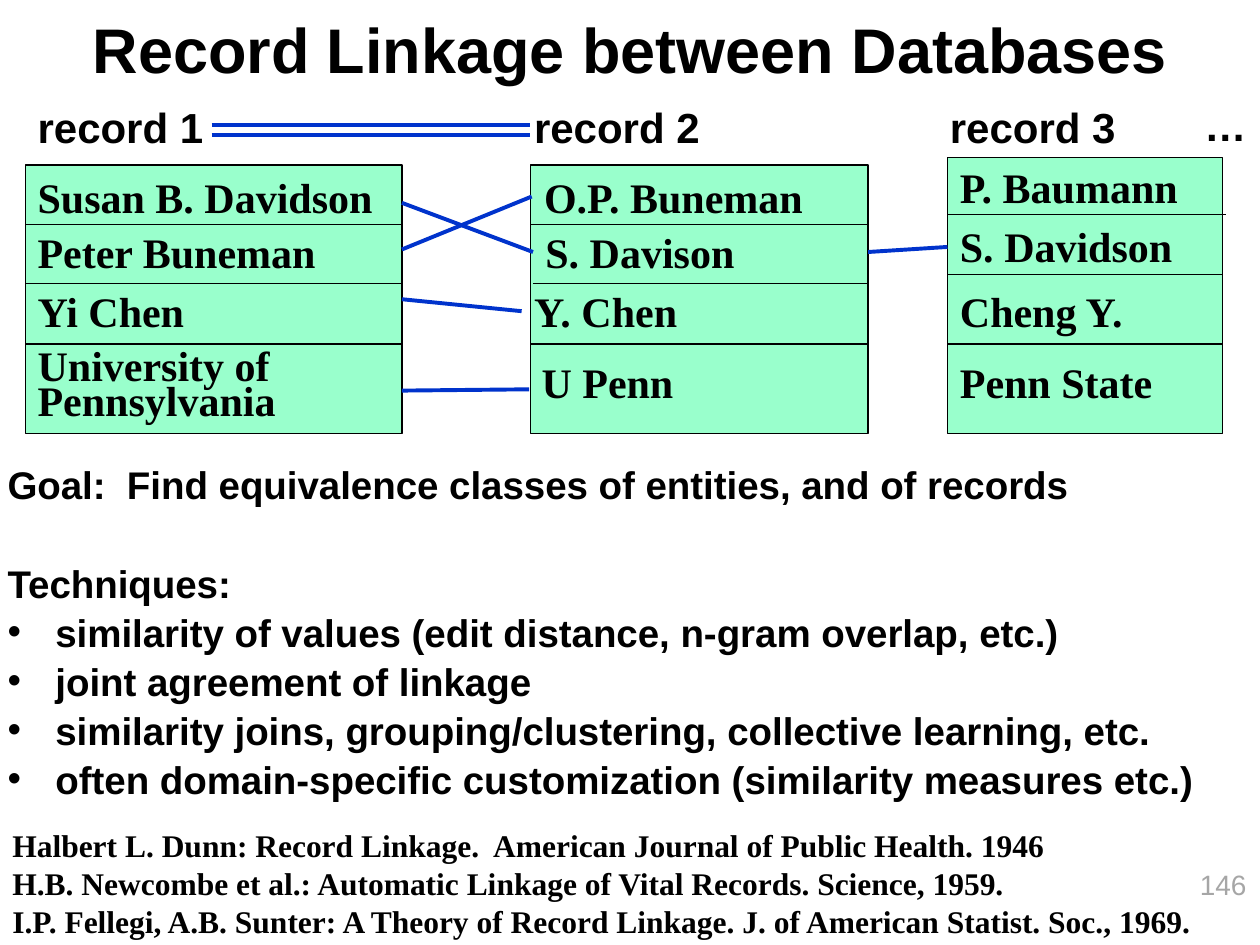
import pptx
import pptx.util
import pptx.dml.color
import pptx.enum.shapes
import pptx.enum.text
import pptx.oxml.ns
from lxml import etree

Inches, Pt = pptx.util.Inches, pptx.util.Pt
PP_ALIGN = pptx.enum.text.PP_ALIGN
ANCHOR = pptx.enum.text.MSO_ANCHOR
qn = pptx.oxml.ns.qn

COLORS = {"ink": "000000", "record": "99FFCC", "link": "0033CC",
          "paper": "FFFFFF", "number": "A6A6A6"}
SANS, SERIF = "Arial", "Times New Roman"


def rgb(name):
    return pptx.dml.color.RGBColor.from_string(COLORS[name])


class LinkageSlide:
    def __init__(self, presentation):
        self.slide = presentation.slides.add_slide(presentation.slide_layouts[1])
        self.shapes = self.slide.shapes

    def place(self, shape, left, top, width, height):
        shape.left, shape.top = Inches(left), Inches(top)
        shape.width, shape.height = Inches(width), Inches(height)

    def set_text(self, frame, lines, size, font, color="ink", bold=True,
                 align=PP_ALIGN.LEFT, spacing=None, wrap=False,
                 anchor=ANCHOR.TOP, bullets=None):
        """Fill a frame; bullets, if given, are the lines that carry one."""
        frame.word_wrap = wrap
        frame.vertical_anchor = anchor
        frame.auto_size = pptx.enum.text.MSO_AUTO_SIZE.NONE
        frame.text = "\n".join(lines)
        for paragraph, line in zip(frame.paragraphs, lines):
            paragraph.alignment = align
            paragraph.space_before = Pt(0)
            if spacing:
                paragraph.line_spacing = Pt(spacing)
            if bullets is not None:
                self.set_bullet(paragraph, line in bullets)
            paragraph.font.size = Pt(size)
            paragraph.font.name = font
            paragraph.font.bold = bold
            paragraph.font.color.rgb = rgb(color)

    def set_bullet(self, paragraph, bulleted):
        properties = paragraph._p.get_or_add_pPr()
        indent = Inches(0.38) if bulleted else 0
        properties.set("marL", str(indent))
        properties.set("indent", str(-indent))
        if bulleted:
            etree.SubElement(properties, qn("a:buFont")).set("typeface", SANS)
            etree.SubElement(properties, qn("a:buChar")).set("char", "•")
        else:
            etree.SubElement(properties, qn("a:buNone"))

    def title(self, text):
        title = self.shapes.title
        self.place(title, 0, 0, 10, 0.76)
        self.set_text(title.text_frame, [text], 36, SANS, align=PP_ALIGN.CENTER,
                      wrap=True, anchor=ANCHOR.MIDDLE)

    def body(self, goal, heading, techniques):
        body = self.slide.placeholders[1]
        self.place(body, -0.04, 3.59, 9.74, 2.85)
        self.set_text(body.text_frame, [goal, heading, *techniques], 22, SANS,
                      spacing=28, bullets=techniques)
        body.text_frame.paragraphs[1].space_before = Pt(28)

    def label(self, lines, left, top, width, height=0.5, size=24, font=SERIF, **style):
        box = self.shapes.add_textbox(Inches(left), Inches(top),
                                      Inches(width), Inches(height))
        self.set_text(box.text_frame, lines, size, font, **style)

    def rectangle(self, left, top, width, height, fill, outlined=True):
        shape = self.shapes.add_shape(
            pptx.enum.shapes.MSO_SHAPE.RECTANGLE,
            Inches(left), Inches(top), Inches(width), Inches(height))
        shape.shadow.inherit = False
        shape.fill.solid()
        shape.fill.fore_color.rgb = rgb(fill)
        if outlined:
            shape.line.color.rgb = rgb("ink")
            shape.line.width = Pt(0.75)
        else:
            shape.line.fill.background()
        return shape

    def line(self, x1, y1, x2, y2, color="ink", weight=0.75):
        connector = self.shapes.add_connector(
            pptx.enum.shapes.MSO_CONNECTOR.STRAIGHT,
            Inches(x1), Inches(y1), Inches(x2), Inches(y2))
        connector.line.color.rgb = rgb(color)
        connector.line.width = Pt(weight)
        etree.SubElement(connector._element.spPr, qn("a:effectLst"))
        return connector

    def link(self, *ends):
        return self.line(*ends, color="link", weight=2.25)

    def record(self, heading, heading_left, box, dividers, fields):
        """Draw a headed box; dividers are (x1, y, x2), fields are label arguments."""
        shape = self.rectangle(*box, "record")
        for x1, y, x2 in dividers:
            self.line(x1, y, x2, y)
        for lines, left, top, width, *height in fields:
            self.label(lines, left, top, width, *height,
                       spacing=20 if height else None)
        self.label([heading], heading_left, 0.76, 1.53, font=SANS)
        return shape


def main():
    presentation = pptx.Presentation()
    presentation.slide_width, presentation.slide_height = Inches(10), Inches(7.5)
    page = LinkageSlide(presentation)

    page.title("Record Linkage between Databases")
    page.body(
        "Goal:  Find equivalence classes of entities, and of records",
        "Techniques:",
        ["similarity of values (edit distance, n-gram overlap, etc.)",
         "joint agreement of linkage",
         "similarity joins, grouping/clustering, collective learning, etc.",
         "often domain-specific customization (similarity measures etc.)"])

    first_record = page.record(
        "record 1", 0.2, (0.2, 1.31, 2.99, 2.13),
        [(0.2, y, 3.19) for y in (1.78, 2.25, 2.73)],
        [(["Susan B. Davidson"], 0.2, 1.31, 2.89),
         (["Peter Buneman"], 0.2, 1.75, 2.51),
         (["Yi Chen"], 0.2, 2.22, 1.46),
         (["University of", "Pennsylvania"], 0.2, 2.77, 2.19, 0.66)])
    page.record(
        "record 2", 4.14, (4.21, 1.31, 2.68, 2.13),
        [(4.21, 1.78, 6.89), (4.23, 2.25, 6.89), (4.21, 2.73, 6.89)],
        [(["O.P. Buneman"], 4.22, 1.31, 2.27),
         (["S. Davison"], 4.23, 1.75, 1.72),
         (["Y. Chen"], 4.14, 2.22, 1.43),
         (["U Penn"], 4.2, 2.9, 1.26, 0.38)])
    page.record(
        "record 3", 7.44, (7.52, 1.25, 2.18, 2.19),
        [(7.52, 1.7, 9.73), (7.52, 2.18, 9.7), (7.52, 2.73, 9.7)],
        [(["P. Baumann"], 7.52, 1.23, 1.95),
         (["S. Davidson"], 7.52, 1.7, 1.91),
         (["Cheng Y."], 7.52, 2.22, 1.59),
         (["Penn State"], 7.52, 2.9, 1.74, 0.38)])
    page.label(["…"], 9.46, 0.74, 0.54, 0.51, font=SANS)

    references = page.rectangle(0, 6.51, 9.73, 1.01, "paper", outlined=False)
    page.set_text(references.text_frame, [
        "Halbert L. Dunn: Record Linkage.  American Journal of Public Health. 1946",
        "H.B. Newcombe et al.: Automatic Linkage of Vital Records. Science, 1959.",
        "I.P. Fellegi, A.B. Sunter: A Theory of Record Linkage. "
        "J. of American Statist. Soc., 1969."], 18, SERIF)

    for ends in [(3.19, 1.61, 4.23, 2), (6.89, 2, 7.52, 1.96),
                 (3.19, 3.1, 4.2, 3.09), (3.19, 1.98, 4.22, 1.56),
                 (1.68, 0.99, 4.21, 0.99), (1.68, 1.07, 4.21, 1.07)]:
        page.link(*ends)
    chen_link = page.link(3.19, 2.37, 4.14, 2.47)
    chen_link.begin_connect(first_record, 3)

    page.label(["146"], 9.2, 6.84, 0.79, 0.4, size=16, font=SANS, color="number",
               bold=False, align=PP_ALIGN.RIGHT, wrap=True)
    presentation.save("out.pptx")


if __name__ == "__main__":
    main()
